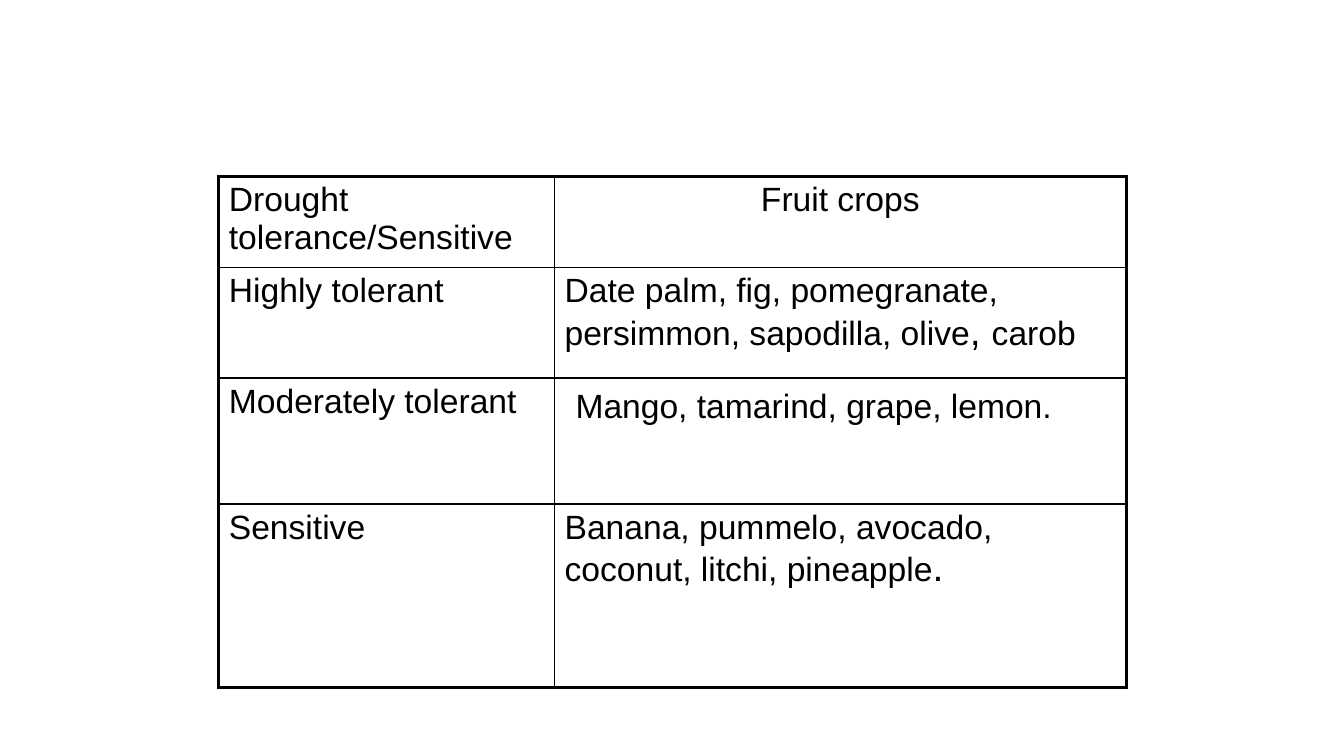
from lxml.etree import SubElement
from pptx import Presentation
from pptx.dml.color import RGBColor
from pptx.enum.text import PP_ALIGN
from pptx.oxml.ns import qn
from pptx.util import Inches, Pt

FONT = "Arial"
BLACK = "000000"
BODY, LARGE = 24, 28
THIN, THICK = 1, 2.25
COL_WIDTHS = [3.33, 5.67]
ROW_HEIGHTS = [0.9, 1.1, 1.25, 1.82]

# Each cell is a list of (text, size) runs
ROWS = [
    [[("Drought tolerance/Sensitive", BODY)], [("Fruit crops", BODY)]],
    [[("Highly tolerant", BODY)],
     [("Date palm, fig, pomegranate, persimmon, sapodilla, olive", BODY),
      (", ", LARGE), ("carob", BODY)]],
    [[("Moderately tolerant", BODY)],
     [(" ", LARGE), ("Mango, tamarind, grape, lemon.", BODY)]],
    [[("Sensitive", BODY)],
     [("Banana, pummelo, avocado, coconut, litchi, pineapple", BODY),
      (".", LARGE)]],
]


def rgb(color):
    return RGBColor.from_string(color)


def set_borders(cell, widths):
    """Draw left, right, top and bottom borders, widths in points."""
    tcPr = cell._tc.get_or_add_tcPr()
    for side, width in zip("LRTB", widths):
        ln = SubElement(tcPr, qn(f"a:ln{side}"), w=str(int(Pt(width))))
        fill = SubElement(ln, qn("a:solidFill"))
        SubElement(fill, qn("a:srgbClr"), val=BLACK)


def write_cell(cell, runs, align):
    p = cell.text_frame.paragraphs[0]
    p.alignment = align
    for text, size in runs:
        r = p.add_run()
        r.text = text
        r.font.name = FONT
        r.font.size = Pt(size)
        r.font.bold = False
        r.font.color.rgb = rgb(BLACK)


def add_crop_table(s):
    n_rows, n_cols = len(ROWS), len(COL_WIDTHS)
    table = s.shapes.add_table(
        n_rows, n_cols, Inches(2.17), Inches(1.75),
        Inches(sum(COL_WIDTHS)), Inches(sum(ROW_HEIGHTS))).table
    table.first_row = table.horz_banding = False
    for column, width in zip(table.columns, COL_WIDTHS):
        column.width = Inches(width)
    for row, height in zip(table.rows, ROW_HEIGHTS):
        row.height = Inches(height)

    for i, row in enumerate(ROWS):
        for j, runs in enumerate(row):
            cell = table.cell(i, j)
            # Thick frame outside, thin rules inside
            outer = (j == 0, j == n_cols - 1, i == 0, i == n_rows - 1)
            set_borders(cell, [THICK if edge else THIN for edge in outer])
            cell.fill.background()
            centred = i == 0 and j == 1
            write_cell(cell, runs, PP_ALIGN.CENTER if centred else PP_ALIGN.LEFT)


def main():
    prs = Presentation()
    prs.slide_width, prs.slide_height = Inches(13.33), Inches(7.5)
    s = prs.slides.add_slide(prs.slide_layouts[6])
    add_crop_table(s)
    prs.save("out.pptx")


if __name__ == "__main__":
    main()
